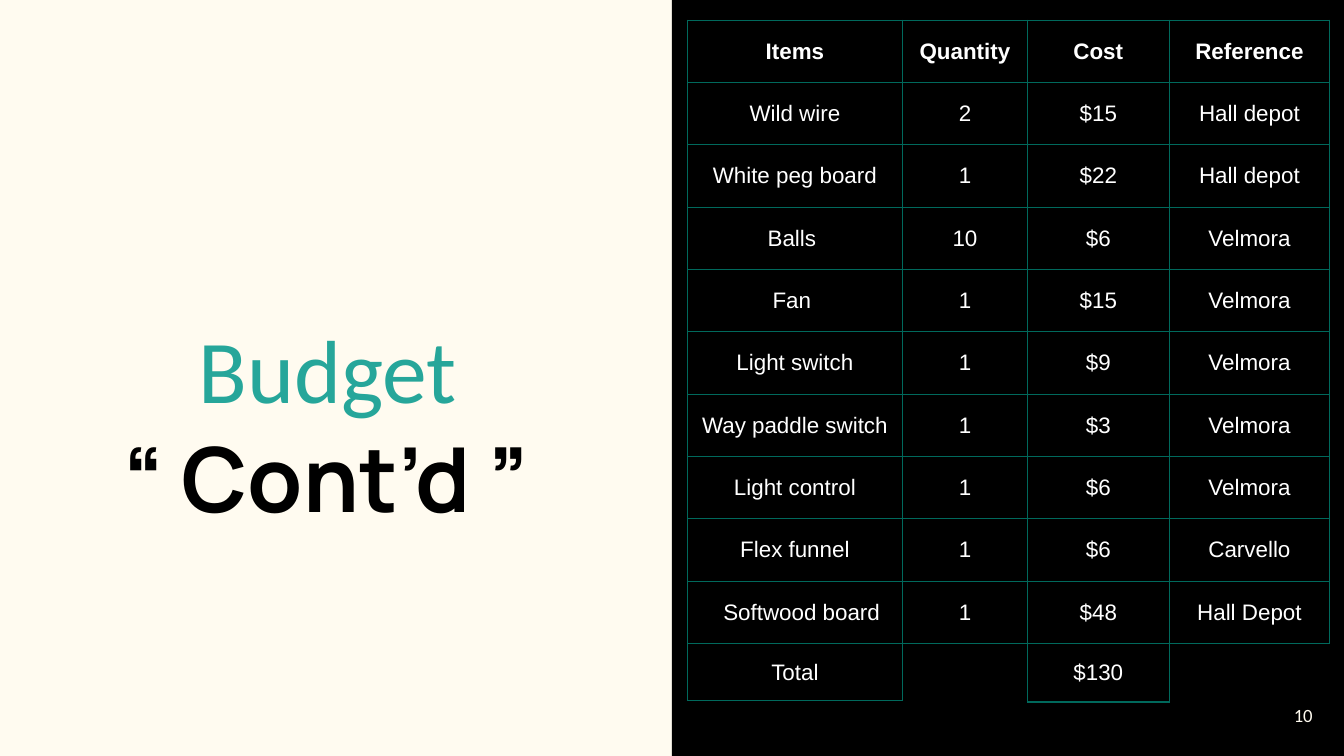
import pptx
import pptx.util
import pptx.dml.color
import pptx.enum.shapes
import pptx.enum.text
import pptx.oxml.ns
import lxml.etree

COLORS = {"cream": "FFFBF0", "black": "000000", "white": "FFFFFF",
          "teal": "26A69A", "border": "00695C"}
HEADER = ("Items", "Quantity", "Cost", "Reference")
ALIGN = pptx.enum.text.PP_ALIGN
ANCHOR = pptx.enum.text.MSO_ANCHOR
rgb = pptx.dml.color.RGBColor.from_string
inset = pptx.util.Inches(0.1)

prs = pptx.Presentation()
prs.slide_width = pptx.util.Inches(10)
prs.slide_height = prs.slide_width * 9 // 16
col, row = prs.slide_width / 100, prs.slide_height / 100
s = prs.slides.add_slide(prs.slide_layouts[6])
s.background.fill.solid()
s.background.fill.fore_color.rgb = rgb(COLORS["cream"])


def add_run(p, text, size, font, color, bold=False):
    r = p.add_run()
    r.text = text
    r.font.size = pptx.util.Pt(size)
    r.font.name = font
    r.font.bold = bold
    r.font.color.rgb = rgb(COLORS[color])


def add_grid(left, top, widths, height, rows):
    sp = s.shapes.add_table(len(rows), len(widths), int(left * col), int(top * row),
                            int(sum(widths) * col), int(height * row))
    tbl = sp.table
    tbl.first_row = tbl.horz_banding = False
    for c, width in enumerate(widths):
        tbl.columns[c].width = int(width * col)
    for i, values in enumerate(rows):
        tbl.rows[i].height = int(height * row / len(rows))
        for c, value in enumerate(values):
            cell = tbl.cell(i, c)
            cell.margin_left = cell.margin_right = inset
            cell.margin_top = cell.margin_bottom = inset
            cell.vertical_anchor = ANCHOR.MIDDLE
            p = cell.text_frame.paragraphs[0]
            p.alignment = ALIGN.CENTER
            add_run(p, value, 12, "Arial", "white", value in HEADER)
            tcPr = cell._tc.get_or_add_tcPr()
            for side in ("a:lnL", "a:lnR", "a:lnT", "a:lnB"):
                ln = lxml.etree.SubElement(tcPr, pptx.oxml.ns.qn(side),
                                           w=str(pptx.util.Pt(0.75)))
                fill = lxml.etree.SubElement(ln, pptx.oxml.ns.qn("a:solidFill"))
                lxml.etree.SubElement(fill, pptx.oxml.ns.qn("a:srgbClr"),
                                      val=COLORS["border"])
            cell.fill.background()
    return tbl


panel = s.shapes.add_shape(pptx.enum.shapes.MSO_SHAPE.RECTANGLE, int(50 * col), 0,
                           int(50 * col), prs.slide_height)
panel.shadow.inherit = False
panel.fill.solid()
panel.fill.fore_color.rgb = rgb(COLORS["black"])
panel.line.fill.background()

items = [
    HEADER,
    ("Wild wire", "2", "$15", "Hall depot"),
    ("White peg board", "1", "$22", "Hall depot"),
    ("Balls ", "10", "$6", "Velmora"),
    ("Fan ", "1", "$15", "Velmora"),
    ("Light switch", "1", "$9", "Velmora"),
    ("Way paddle switch ", "1", "$3", "Velmora"),
    ("Light control", "1", "$6", "Velmora"),
    ("Flex funnel", "1", "$6", "Carvello"),
    ("Softwood board", "1", "$48", "Hall Depot"),
]
widths = (16, 9.3, 10.55, 11.95)
left, top, height = 51.15, 2.67, 82.5
budget = add_grid(left, top, widths, height, items)
budget.cell(len(items) - 1, 0).margin_left = 2 * inset
add_grid(left + sum(widths[:2]), top + height, widths[2:3], 7.7, [("$130",)])
add_grid(left, top + height, widths[:1], 7.5, [("Total",)])

texts = [
    ("Budget", 8.2, 42.7, 32.4, 14.8, ANCHOR.BOTTOM, ALIGN.CENTER, 48, "Calibri", "teal", False),
    ("“ Cont’d ”", 8.2, 54.1, 32.4, 14.8, ANCHOR.TOP, ALIGN.LEFT, 48, "Manrope", "black", True),
    ("10", 92.65, 90.7, 6, 7.65, ANCHOR.MIDDLE, ALIGN.RIGHT, 10, "Calibri", "cream", False),
]
for text, x, y, w, h, anchor, align, size, font, color, bold in texts:
    sp = s.shapes.add_textbox(int(x * col), int(y * row), int(w * col), int(h * row))
    tf = sp.text_frame
    tf.word_wrap = True
    tf.margin_left = tf.margin_right = tf.margin_top = tf.margin_bottom = inset
    tf.vertical_anchor = anchor
    p = tf.paragraphs[0]
    p.alignment = align
    add_run(p, text, size, font, color, bold)

prs.save("out.pptx")
